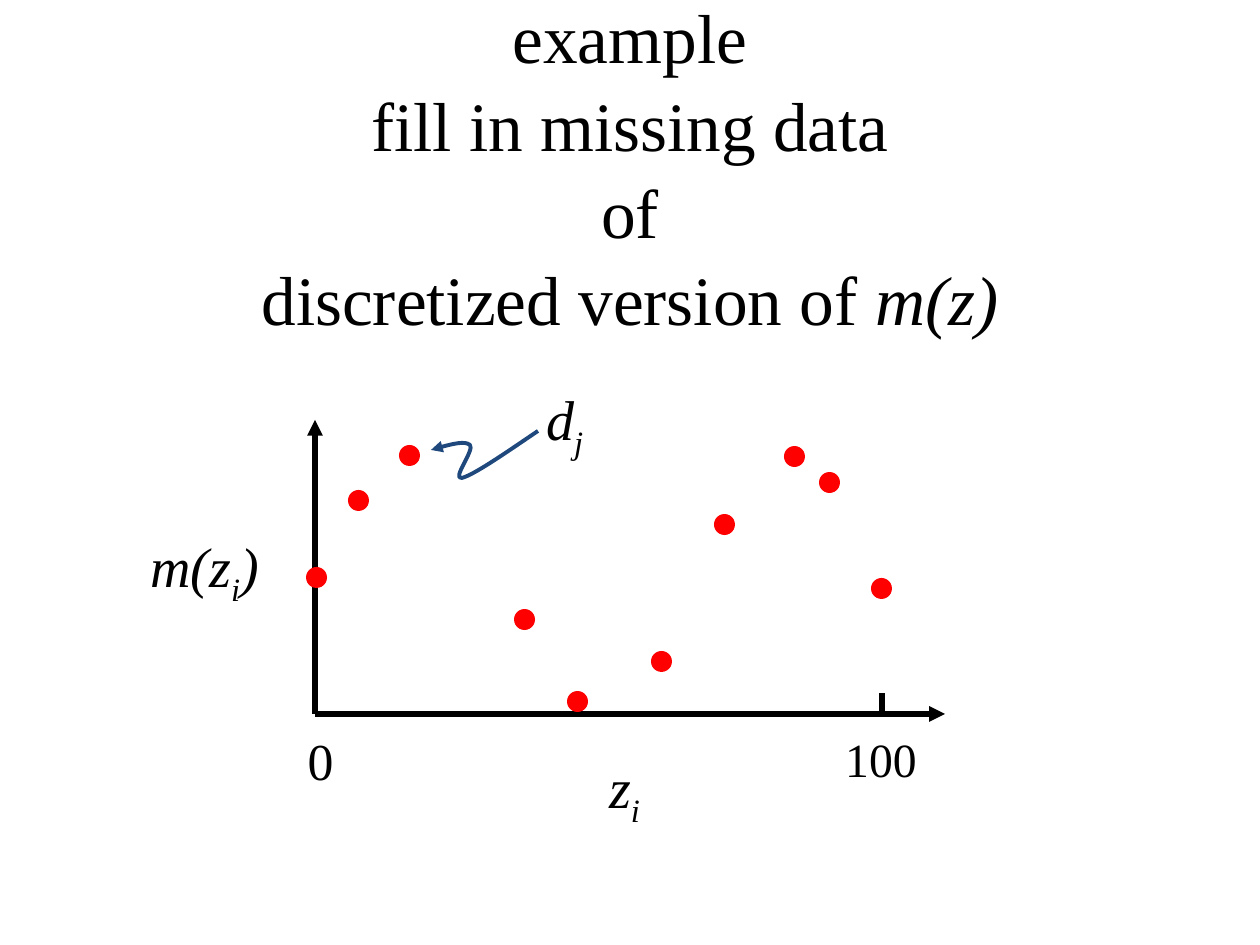
from pptx import Presentation
from pptx import util as u
from pptx.dml.color import RGBColor
from pptx.enum import shapes, text
from pptx.oxml.ns import qn
from lxml import etree

PX = 914400 / 126
FONT = "Times New Roman"
BLACK, RED, BLUE = "000000", "FF0000", "1F497D"
DOT = 21

# Top left corners of the dots, measured from the top left of the plot
DOTS = [(-9, 147), (33, 70), (84, 25), (199, 189), (252, 271),
        (336, 231), (399, 94), (469, 26), (504, 52), (556, 158)]

# Start point, then two control points and an end point for each bend
POINTER = [(116, 30), (132, 25), (150, 21), (155, 25), (160, 30),
           (136, 60), (147, 58), (159, 55), (192, 32), (223, 11)]

# Box in the plot, paragraph format, runs of (text, size, italic, subscript)
LABELS = [
    ((-210, 105, 199, 95), {},
     [("m(z", 32, True, False), ("i", 32, True, True), (")", 32, True, False)]),
    ((199, 326, 221, 105), {}, [("z", 32, True, False), ("i", 32, True, True)]),
    ((139, -42, 221, 105), {}, [("d", 32, True, False), ("j", 32, True, True)]),
    ((-31, 315, 73, 63), {"line_spacing": 0.8}, [("0", 29.6, False, False)]),
    ((498, 315, 136, 63), {"line_spacing": 0.8}, [("100", 27.2, False, False)]),
]


def px(length):
    return u.Emu(round(length * PX))


def color(value):
    return RGBColor.from_string(value)


def apply(target, values):
    for name, value in values.items():
        setattr(target, name, value)


def add_run(para, words, size, italic=False, subscript=False):
    span = para.add_run()
    span.text = words
    apply(span.font, {"name": FONT, "size": u.Pt(size), "italic": italic})
    span.font.color.rgb = color(BLACK)
    if subscript:
        span.font._element.set("baseline", "-25000")


def style_line(shape, value, width, arrow=None):
    shape.line.color.rgb = color(value)
    shape.line.width = u.Pt(width)
    if arrow:
        line = shape._element.spPr.find(qn("a:ln"))
        etree.SubElement(line, qn(arrow), type="triangle")


def add_title(page, left, top, width, height):
    title = page.shapes.title
    apply(title, {"left": px(left), "top": px(top),
                  "width": px(width), "height": px(height)})
    apply(title.text_frame, {"word_wrap": True, "margin_top": 0, "margin_bottom": 0,
                             "auto_size": text.MSO_AUTO_SIZE.NONE,
                             "vertical_anchor": text.MSO_ANCHOR.MIDDLE})
    para = title.text_frame.paragraphs[0]
    apply(para, {"alignment": text.PP_ALIGN.CENTER, "line_spacing": 1.05})
    lines = ["example", "fill in missing data", "of", "discretized version of "]
    for number, words in enumerate(lines):
        if number:
            para.add_line_break()
        add_run(para, words, 39.6)
    add_run(para, "m(z)", 39.6, italic=True)


def add_axis(page, start, end, arrow=None):
    axis = page.shapes.add_connector(
        shapes.MSO_CONNECTOR.STRAIGHT, *map(px, start + end))
    style_line(axis, BLACK, 3, arrow)
    etree.SubElement(axis._element.spPr, qn("a:effectLst"))


def add_dot(page, left, top):
    dot = page.shapes.add_shape(
        shapes.MSO_SHAPE.OVAL, px(left), px(top), px(DOT), px(DOT))
    dot.fill.solid()
    dot.fill.fore_color.rgb = color(RED)
    dot.line.fill.background()
    dot.shadow.inherit = False


def add_pointer(page, points):
    builder = page.shapes.build_freeform(*points[0], scale=PX)
    builder.add_line_segments(points[1:], close=False)
    curve = builder.convert_to_shape()
    curve.fill.background()
    curve.shadow.inherit = False
    style_line(curve, BLUE, 2.25, "a:headEnd")
    # Turn each three straight steps into one cubic bend
    path = next(curve._element.iter(qn("a:path")))
    steps = path.findall(qn("a:lnTo"))
    for first in range(0, len(steps), 3):
        bend = etree.SubElement(path, qn("a:cubicBezTo"))
        for step in steps[first:first + 3]:
            bend.append(step[0])
            path.remove(step)


def add_label(page, box, para_format, runs):
    label = page.shapes.add_textbox(*map(px, box))
    label.text_frame.word_wrap = True
    para = label.text_frame.paragraphs[0]
    apply(para, {"alignment": text.PP_ALIGN.CENTER, "space_before": u.Pt(4),
                 **para_format})
    for run in runs:
        add_run(para, *run)


def add_plot(page, left, top, width, height):
    bottom = top + height
    # Axes and the tick at 100
    add_axis(page, (left, bottom), (left + width, bottom), "a:tailEnd")
    add_axis(page, (left, bottom), (left, top), "a:tailEnd")
    add_axis(page, (left + 567, bottom - 21), (left + 567, bottom))
    # Labels
    for (x, y, w, h), para_format, runs in LABELS:
        add_label(page, (left + x, top + y, w, h), para_format, runs)
    # Data and the pointer to one of them
    for x, y in DOTS:
        add_dot(page, left + x, top + y)
    add_pointer(page, [(left + x, top + y) for x, y in POINTER])


def main():
    deck = Presentation()
    deck.slide_width, deck.slide_height = px(1260), px(945)
    page = deck.slides.add_slide(deck.slide_layouts[5])
    add_title(page, 63, 0, 1134, 330)
    add_plot(page, 315, 420, 630, 294)
    deck.save("out.pptx")


if __name__ == "__main__":
    main()
